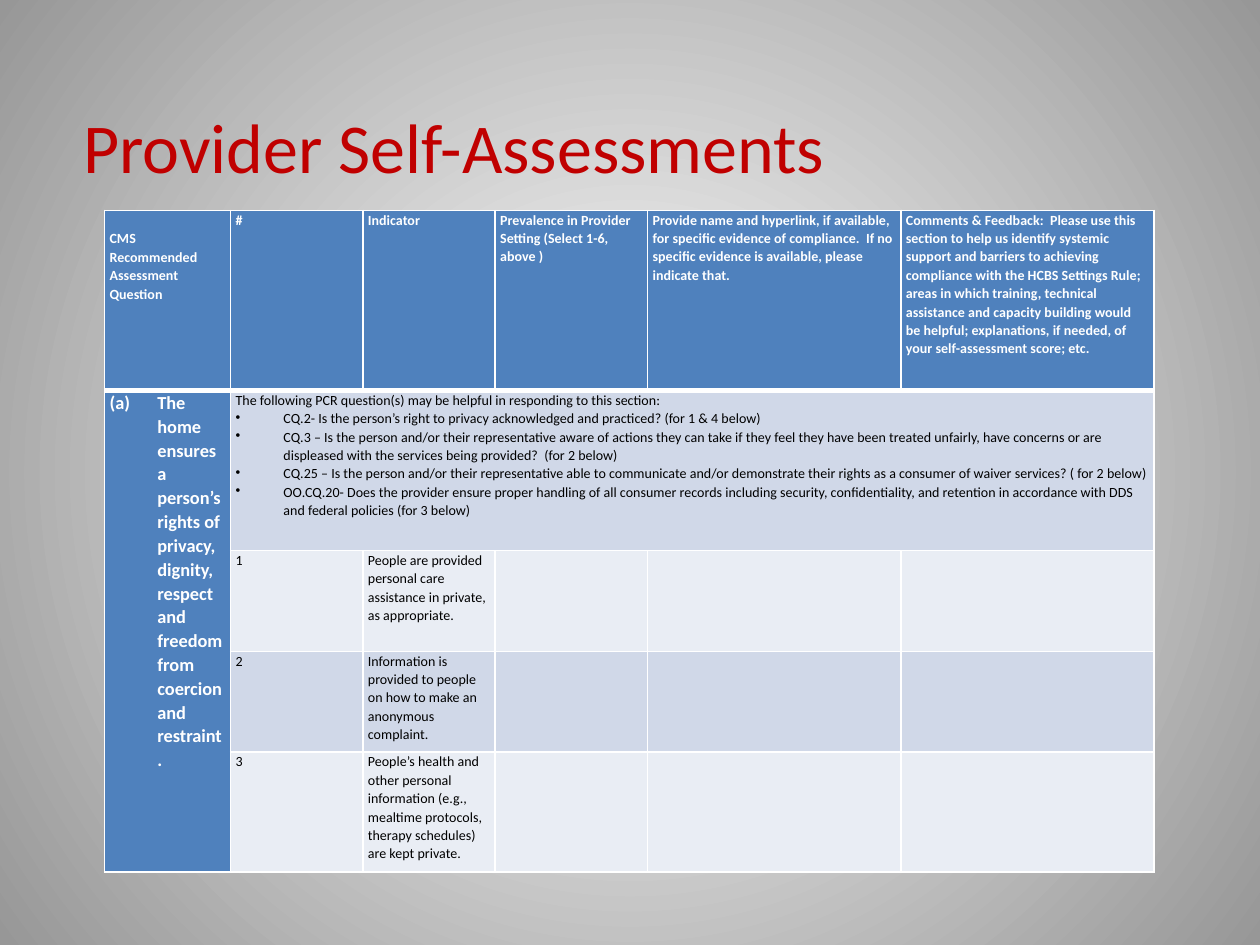
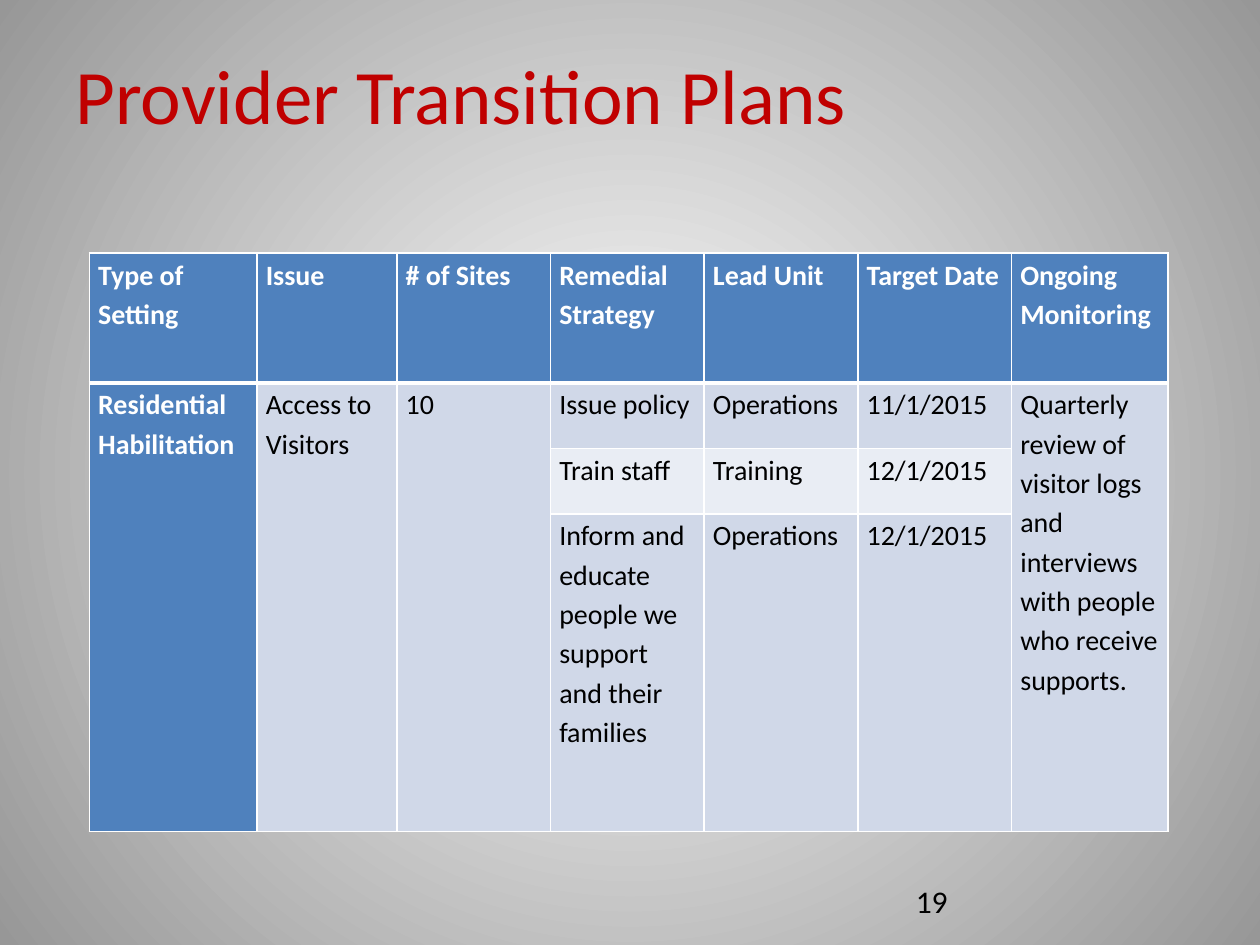
from pptx import Presentation
from pptx import util as u
from pptx.dml.color import RGBColor
from pptx.enum import text
from pptx.oxml.ns import qn
from lxml import etree

THEME = {
    "font": "Calibri",
    "title": RGBColor.from_string("C00000"),
    "header": RGBColor.from_string("4F81BD"),
    "bands": [RGBColor.from_string("E9EDF4"), RGBColor.from_string("D0D8E8")],
    "white": RGBColor.from_string("FFFFFF"),
    "black": RGBColor.from_string("000000"),
    "edge": RGBColor.from_string("979797"),
    "number_size": 18,
    "rule": 1,
    "header_rule": 3,
}

PAGES = [
    {
        "title": "Provider Self-Assessments",
        "title_box": (0.56, 0.77, 9.04, 0.85),
        "title_size": 40,
        "table_at": (0.83, 1.67),
        "widths": [1, 1.05, 1.05, 1.21, 2.01, 2.01],
        "heights": [1.43, 1.27, 0.8, 0.8, 0.95],
        "side_margin": 0.04,
        "line_spacing": 1.07,
        "size": 8,
        "size_exceptions": {(1, 0): 10.5},
        "top_margins": {(0, 0): 0.15},
        "merges": [((1, 0), (4, 0)), ((1, 1), (1, 5))],
        "rows": [
            [
                "CMS Recommended Assessment Question",
                "#",
                "Indicator",
                "Prevalence in Provider Setting (Select 1-6, above )",
                "Provide name and hyperlink, if available, for specific evidence of compliance.  "
                "If no specific evidence is available, please indicate that.",
                "Comments & Feedback:  Please use this section to help us identify systemic support "
                "and barriers to achieving compliance with the HCBS Settings Rule; areas in which "
                "training, technical assistance and capacity building would be helpful; "
                "explanations, if needed, of your self-assessment score; etc.",
            ],
            [
                "(a) The home ensures a person’s rights of privacy, dignity, respect and freedom "
                "from coercion and restraint.",
                "The following PCR question(s) may be helpful in responding to this section:\n"
                "• CQ.2- Is the person’s right to privacy acknowledged and practiced? (for 1 & 4 below)\n"
                "• CQ.3 – Is the person and/or their representative aware of actions they can take if "
                "they feel they have been treated unfairly, have concerns or are displeased with the "
                "services being provided?  (for 2 below)\n"
                "• CQ.25 – Is the person and/or their representative able to communicate and/or "
                "demonstrate their rights as a consumer of waiver services? ( for 2 below)\n"
                "• OO.CQ.20- Does the provider ensure proper handling of all consumer records including "
                "security, confidentiality, and retention in accordance with DDS and federal policies "
                "(for 3 below)",
            ],
            ["", "1", "People are provided personal care assistance in private, as appropriate."],
            ["", "2", "Information is provided to people on how to make an anonymous complaint."],
            ["", "3", "People’s health and other personal information (e.g., mealtime protocols, "
                      "therapy schedules) are kept private."],
        ],
    },
    {
        "title": "Provider Transition Plans",
        "title_box": (0.5, 0.33, 9, 1.25),
        "title_size": 44,
        "table_at": (0.71, 2.01),
        "widths": [1.33, 1.11, 1.22, 1.22, 1.22, 1.22, 1.24],
        "heights": [1.03, 0.52, 0.52, 2.52],
        "side_margin": 0.07,
        "line_spacing": 1.15,
        "size": 16,
        "size_exceptions": {},
        "top_margins": {},
        "merges": [((1, column), (3, column)) for column in (0, 1, 2, 6)],
        "rows": [
            ["Type of Setting", "Issue", "# of Sites", "Remedial Strategy", "Lead Unit",
             "Target Date", "Ongoing Monitoring"],
            ["Residential Habilitation", "Access to Visitors", "10", "Issue policy", "Operations",
             "11/1/2015",
             "Quarterly review of visitor logs and interviews with people who receive supports."],
            ["", "", "", "Train staff", "Training", "12/1/2015"],
            ["", "", "", "Inform and educate people we support and their families", "Operations",
             "12/1/2015"],
        ],
        "number": "19",
    },
]


def write(paragraph, words, size, color, bold=False):
    paragraph.text = words
    paragraph.font.color.rgb = color
    for name, value in {"name": THEME["font"], "size": u.Pt(size), "bold": bold}.items():
        setattr(paragraph.font, name, value)


def rule_cell(cell, header_above, header):
    properties = cell._tc.get_or_add_tcPr()
    for side in "LRTB":
        thick = (side == "B" and header) or (side == "T" and header_above)
        width = THEME["header_rule"] if thick else THEME["rule"]
        line = etree.SubElement(properties, qn(f"a:ln{side}"), w=str(u.Pt(width)))
        paint = etree.SubElement(line, qn("a:solidFill"))
        etree.SubElement(paint, qn("a:srgbClr"), val=str(THEME["white"]))


deck = Presentation()
deck.slide_width, deck.slide_height = u.Inches(10), u.Inches(7.5)

backdrop = deck.slide_master.background.fill
backdrop.gradient()
for stop, position, color in zip(backdrop.gradient_stops, (0, 1), (THEME["white"], THEME["edge"])):
    stop.position = position
    stop.color.rgb = color
glow = deck.slide_master.element.find(".//" + qn("a:gradFill"))
for direction in glow.findall(qn("a:lin")):
    glow.remove(direction)
circle = etree.SubElement(glow, qn("a:path"), {"path": "circle"})
etree.SubElement(circle, qn("a:fillToRect"), {side: "50000" for side in "ltrb"})

for page in PAGES:
    slide = deck.slides.add_slide(deck.slide_layouts[5])
    title = slide.shapes.title
    for name, value in zip(("left", "top", "width", "height"), page["title_box"]):
        setattr(title, name, u.Inches(value))
    title_format = {"vertical_anchor": text.MSO_ANCHOR.TOP, "word_wrap": True,
                    "auto_size": text.MSO_AUTO_SIZE.NONE}
    for name, value in title_format.items():
        setattr(title.text_frame, name, value)
    heading = title.text_frame.paragraphs[0]
    write(heading, page["title"], page["title_size"], THEME["title"])
    heading.alignment = text.PP_ALIGN.LEFT

    widths, heights = page["widths"], page["heights"]
    extent = (*page["table_at"], sum(widths), sum(heights))
    grid = slide.shapes.add_table(len(heights), len(widths), *map(u.Inches, extent)).table
    for column, width in zip(grid.columns, widths):
        column.width = u.Inches(width)
    for row, height in zip(grid.rows, heights):
        row.height = u.Inches(height)
    for first, last in page["merges"]:
        grid.cell(*first).merge(grid.cell(*last))

    for r in range(len(heights)):
        for c in range(len(widths)):
            cell = grid.cell(r, c)
            emphasis = r == 0 or c == 0
            rule_cell(cell, r == 1, r == 0)
            cell.fill.solid()
            cell.fill.fore_color.rgb = THEME["header"] if emphasis else THEME["bands"][r % 2]
            margins = {"left": page["side_margin"], "right": page["side_margin"],
                       "top": page["top_margins"].get((r, c), 0), "bottom": 0}
            for side, value in margins.items():
                setattr(cell, f"margin_{side}", u.Inches(value))
            words = page["rows"][r][c] if c < len(page["rows"][r]) else ""
            if not words:
                continue
            for i, entry in enumerate(words.split("\n")):
                paragraph = cell.text_frame.paragraphs[0] if i == 0 else cell.text_frame.add_paragraph()
                paragraph.line_spacing = page["line_spacing"]
                marker, _, remainder = entry.partition(" ")
                if marker in ("•", "(a)"):
                    entry = remainder
                    layout = paragraph._p.get_or_add_pPr()
                    layout.set("marL", str(u.Inches(0.38)))
                    layout.set("indent", str(-u.Inches(0.38)))
                    if marker == "•":
                        etree.SubElement(layout, qn("a:buChar"), char=marker)
                    else:
                        etree.SubElement(layout, qn("a:buAutoNum"), type="alphaLcParenBoth")
                write(paragraph, entry, page["size_exceptions"].get((r, c), page["size"]),
                      THEME["white"] if emphasis else THEME["black"], emphasis)

    if "number" in page:
        footer = slide.shapes.add_textbox(*map(u.Inches, (7.17, 6.95, 2.33, 0.4))).text_frame
        footer.word_wrap = True
        footer.vertical_anchor = text.MSO_ANCHOR.MIDDLE
        write(footer.paragraphs[0], page["number"], THEME["number_size"], THEME["black"])

deck.save("out.pptx")
